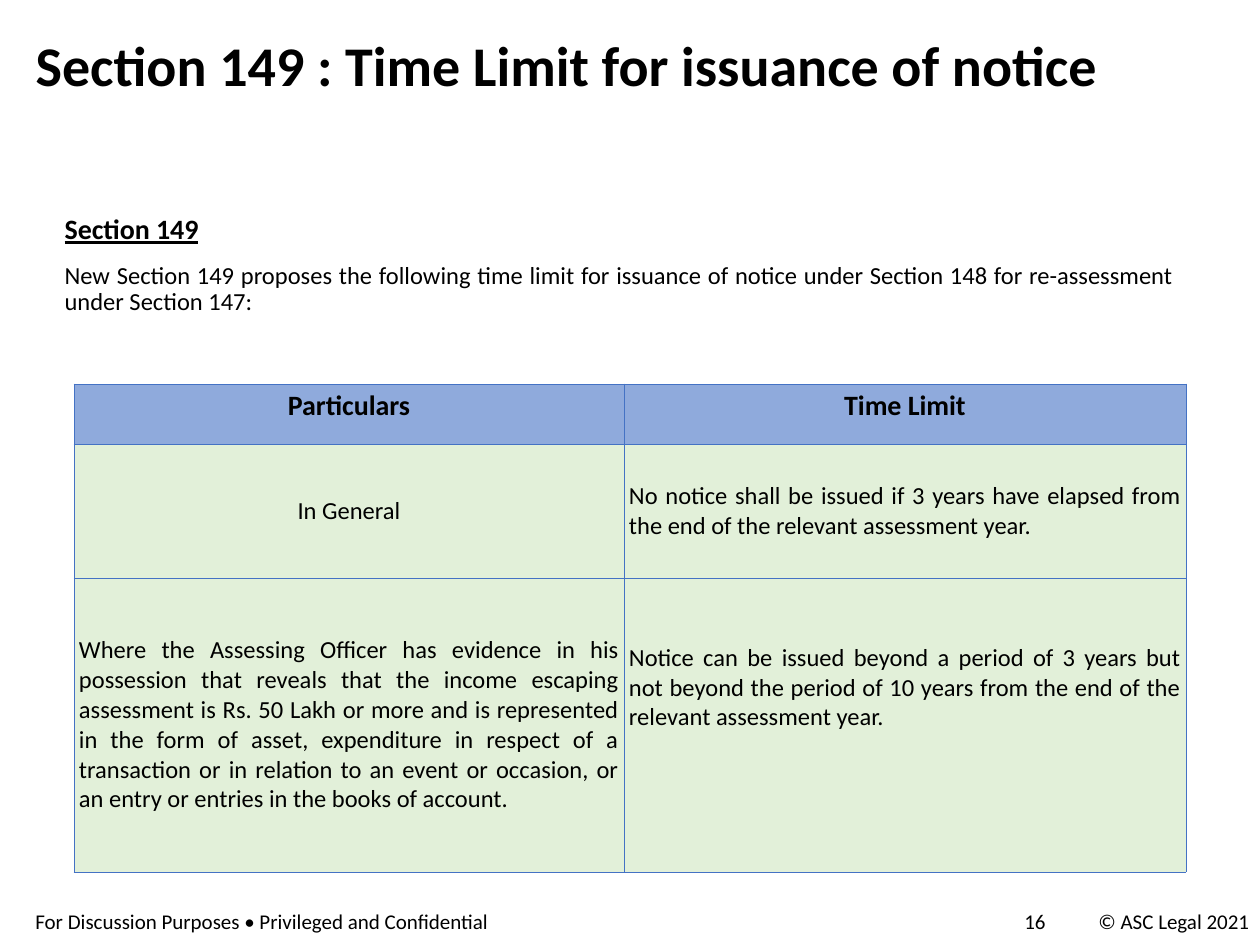
from lxml.etree import SubElement
from pptx import Presentation
from pptx.dml.color import RGBColor
from pptx.enum.text import MSO_ANCHOR as Anchor, MSO_AUTO_SIZE as AutoSize, PP_ALIGN as Align
from pptx.oxml import parse_xml
from pptx.oxml.ns import nsdecls, qn
from pptx.util import Emu, Pt

COLORS = {"text": "000000", "header": "8FAADC", "body": "E2F0D9", "border": "4472C4"}
FONT = "Calibri"
TITLE = "Section 149 : Time Limit for issuance of notice"
INTRO = [
    ("Section 149", {"size": 16, "bold": True, "underline": True}),
    ("New Section 149 proposes the following time limit for issuance of notice "
     "under Section 148 for re-assessment under Section 147:", {"size": 14}),
]
ROWS = [
    ("Particulars", "Time Limit"),
    ("In General",
     "No notice shall be issued if 3 years have elapsed from the end of the "
     "relevant assessment year."),
    ("Where the Assessing Officer has evidence in his possession that reveals that "
     "the income escaping assessment is Rs. 50 Lakh or more and is represented in "
     "the form of asset, expenditure in respect of a transaction or in relation to "
     "an event or occasion, or an entry or entries in the books of account.",
     "Notice can be issued beyond a period of 3 years but not beyond the period of "
     "10 years from the end of the relevant assessment year."),
]
FOOTERS = [
    ("For Discussion Purposes • Privileged and Confidential", 23, 494),
    ("16", 1012, 50),
    ("© ASC Legal 2021", 1086, 185),
]
TITLE_AREA = (23, 43, 1163, 58)
INTRO_AREA = (52, 209, 1135, 149)
TABLE_AREA = (74, 384, 1112, 488)
COLUMN_WIDTHS = (550, 562)
ROW_HEIGHTS = (60, 134, 294)
FOOTER_TOP, FOOTER_HEIGHT = 902, 38
CELL_MARGIN, LOWERED_MARGIN = 5, 65


def px(length):
    """Turn pixels into EMU."""
    return Emu(round(length * 914400 / 126))


def place(shape, area):
    """Move a shape to a pixel area."""
    shape.left, shape.top, shape.width, shape.height = map(px, area)


def write(para, text, size=14, bold=False, underline=False, align=Align.LEFT,
          line=1.0, before=0):
    """Fill one paragraph with formatted text, without a bullet."""
    properties = para._p.get_or_add_pPr()
    properties.set("marL", "0")
    properties.set("indent", "0")
    SubElement(properties, qn("a:buNone"))
    para.alignment = align
    para.line_spacing = line
    para.space_before = Pt(before)
    span = para.add_run()
    span.text = text
    font = span.font
    font.name, font.size, font.bold, font.underline = FONT, Pt(size), bold, underline
    font.color.rgb = RGBColor.from_string(COLORS["text"])


def prepare(shape, area):
    """Place a text shape and return its frame, set to wrap from the top."""
    place(shape, area)
    frame = shape.text_frame
    frame.word_wrap = True
    frame.auto_size = AutoSize.NONE
    frame.vertical_anchor = Anchor.TOP
    return frame


def outline(cell):
    """Draw thin borders on all sides of a cell."""
    properties = cell._tc.get_or_add_tcPr()
    for index, side in enumerate(("lnL", "lnR", "lnT", "lnB")):
        properties.insert(index, parse_xml(
            f'<a:{side} {nsdecls("a")} w="{Pt(0.5)}"><a:solidFill>'
            f'<a:srgbClr val="{COLORS["border"]}"/></a:solidFill></a:{side}>'))


def add_limits(page):
    """Add the table of time limits."""
    table = page.shapes.add_table(len(ROWS), len(COLUMN_WIDTHS), *map(px, TABLE_AREA)).table
    table.horz_banding = False
    for column, width in zip(table.columns, COLUMN_WIDTHS):
        column.width = px(width)
    for r, (texts, height) in enumerate(zip(ROWS, ROW_HEIGHTS)):
        table.rows[r].height = px(height)
        header = r == 0
        for c, text in enumerate(texts):
            cell = table.cell(r, c)
            lowered = (r, c) == (2, 1)
            cell.margin_left = cell.margin_right = cell.margin_bottom = px(CELL_MARGIN)
            cell.margin_top = px(LOWERED_MARGIN if lowered else CELL_MARGIN)
            cell.vertical_anchor = Anchor.TOP if header or lowered else Anchor.MIDDLE
            cell.fill.solid()
            cell.fill.fore_color.rgb = RGBColor.from_string(COLORS["header" if header else "body"])
            outline(cell)
            centered = header or (r, c) == (1, 0)
            write(cell.text_frame.paragraphs[0], text, size=16 if header else 14,
                  bold=header, align=Align.CENTER if centered else Align.JUSTIFY)


def main():
    """Build and save the slide."""
    deck = Presentation()
    deck.slide_width, deck.slide_height = px(1260), px(945)
    page = deck.slides.add_slide(deck.slide_layouts[1])

    title = prepare(page.shapes.title, TITLE_AREA)
    write(title.paragraphs[0], TITLE, size=32, bold=True, line=0.7)

    intro = prepare(page.placeholders[1], INTRO_AREA)
    for index, (text, style) in enumerate(INTRO):
        para = intro.add_paragraph() if index else intro.paragraphs[0]
        write(para, text, align=Align.JUSTIFY, line=0.9, before=10 if index else 0, **style)

    add_limits(page)

    for text, left, width in FOOTERS:
        area = (left, FOOTER_TOP, width, FOOTER_HEIGHT)
        box = page.shapes.add_textbox(*map(px, area))
        write(prepare(box, area).paragraphs[0], text, size=12)

    deck.save("out.pptx")


if __name__ == "__main__":
    main()
